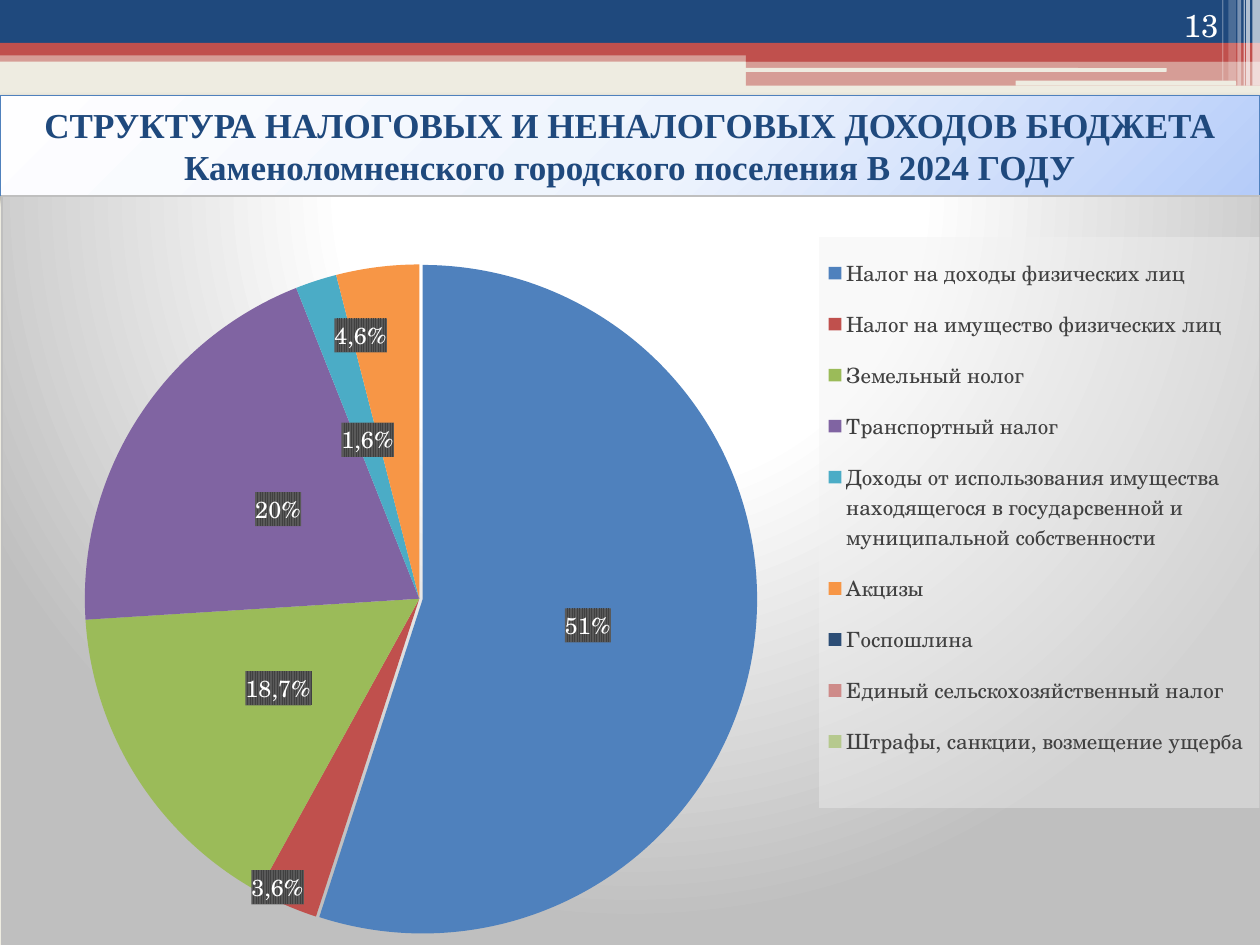
from pptx import Presentation, util as u
from pptx.chart.data import CategoryChartData
from pptx.dml.color import RGBColor
from pptx.enum import chart as charts, shapes, text
from pptx.oxml import parse_xml
from pptx.oxml.ns import nsdecls, qn

NAVY = RGBColor(0x1F, 0x49, 0x7D)
RED = RGBColor(0xC0, 0x50, 0x4D)
CREAM = RGBColor(0xEE, 0xEC, 0xE1)
WHITE = RGBColor(0xFF, 0xFF, 0xFF)
BLUE = RGBColor(0x4F, 0x81, 0xBD)
GREEN = RGBColor(0x9B, 0xBB, 0x59)
PURPLE = RGBColor(0x80, 0x64, 0xA2)
TEAL = RGBColor(0x4B, 0xAC, 0xC6)
ORANGE = RGBColor(0xF7, 0x96, 0x46)
DARK_BLUE = RGBColor(0x2C, 0x4D, 0x75)
GRAY = RGBColor(0x40, 0x40, 0x40)
BLACK = RGBColor(0, 0, 0)

SERIF = "TeX Gyre Schola"
RECT = shapes.MSO_SHAPE.RECTANGLE
ROUND = shapes.MSO_SHAPE.ROUNDED_RECTANGLE

BANDS = [
    (RECT, 0, 0.4, 10, 0.09, RED, 50),
    (RECT, 0, 0, 10, 0.34, NAVY, 100),
    (RECT, 0, 0.34, 10, 0.1, RED, 100),
    (RECT, 5.92, 0.39, 4.08, 0.1, RED, 100),
    (RECT, 5.92, 0.48, 4.08, 0.2, RED, 50),
    (ROUND, 5.91, 0.54, 3.35, 0.03, CREAM, 100),
    (ROUND, 8.06, 0.64, 1.75, 0.04, CREAM, 100),
]
STRIPES = [
    (9.94, 0.06, 0.68, 65), (9.89, 0.03, 0.68, 65), (9.87, 0.01, 0.68, 60),
    (9.82, 0.03, 0.68, 40), (9.75, 0.06, 0.64, 20), (9.7, 0.01, 0.64, 30),
]
INCOME = [
    ("Налог на доходы физических лиц", 55, BLUE),
    ("Налог на имущество физических лиц", 3, RED),
    ("Земельный нолог", 16, GREEN),
    ("Транспортный налог", 20, PURPLE),
    ("Доходы от использования имущества \nнаходящегося в государсвенной и \n"
     "муниципальной собственности", 2, TEAL),
    ("Акцизы", 4, ORANGE),
    ("Госпошлина", 0, DARK_BLUE),
    ("Единый сельскохозяйственный налог", 0, RED),
    ("Штрафы, санкции, возмещение ущерба \n", 0, GREEN),
]
PALE_POINTS = (7, 8)
LABELS = ["51%", "3,6%", "18,7%", "20%", "1,6%", "4,6%", "0,1%"]
LABEL_SHIFTS = {1: (-0.06, 0.18), 5: (-0.03, -0.13), 6: (0, -0.04)}


def xml(tag, body="", attrs=""):
    return parse_xml(f"<{tag} {nsdecls('a', 'c')} {attrs}>{body}</{tag}>")


def gradient(stops, left, top, right, bottom):
    gs = "".join(f'<a:gs pos="{pos * 1000}"><a:srgbClr val="{c}"/></a:gs>' for pos, c in stops)
    rect = f'l="{left}000" t="{top}000" r="{right}000" b="{bottom}000"'
    return (f'<a:gradFill {nsdecls("a")} rotWithShape="1"><a:gsLst>{gs}</a:gsLst>'
            f'<a:path path="circle"><a:fillToRect {rect}/></a:path></a:gradFill>')


def manual_layout(target="", edge=False, **values):
    body = f'<c:layoutTarget val="{target}"/>' if target else ""
    if edge:
        body += '<c:xMode val="edge"/><c:yMode val="edge"/>'
    body += "".join(f'<c:{k} val="{v}"/>' for k, v in values.items())
    return xml("c:layout", f"<c:manualLayout>{body}</c:manualLayout>")


def label_box():
    return xml("c:spPr", '<a:pattFill prst="narVert"><a:fgClr><a:srgbClr val="404040"/></a:fgClr>'
                         '<a:bgClr><a:srgbClr val="595959"/></a:bgClr></a:pattFill>')


def drop_layout(parent):
    for layout in parent.findall(qn("c:layout")):
        parent.remove(layout)


def set_font(font, size, color, bold=False, name=SERIF):
    font.name, font.size, font.bold = name, u.Pt(size), bold
    font.color.rgb = color


def set_fill(fill, color, alpha=100):
    fill.solid()
    fill.fore_color.rgb = color
    if alpha < 100:
        clr = fill._xPr.find(qn("a:solidFill"))[0]
        clr.append(xml("a:alpha", attrs=f'val="{alpha * 1000}"'))


class Deck:
    def __init__(self):
        self.prs = Presentation()
        self.prs.slide_width, self.prs.slide_height = u.Inches(10), u.Inches(7.5)
        self.s = self.prs.slides.add_slide(self.prs.slide_layouts[6])
        set_fill(self.s.background.fill, CREAM)

    def bar(self, kind, x, y, w, h, color, alpha=100):
        sp = self.s.shapes.add_shape(kind, *map(u.Inches, (x, y, w, h)))
        sp.shadow.inherit = False
        sp.line.fill.background()
        set_fill(sp.fill, color, alpha)
        return sp

    def title(self, x, y, w, h, words):
        sp = self.bar(RECT, x, y, w, h, WHITE)
        sp.line.color.rgb, sp.line.width = BLUE, u.Pt(0.75)
        pr = sp._element.spPr
        stops = [(0, "FEFEFF"), (55, "EDF3FD"), (100, "B5CCF9")]
        pr.replace(pr.find(qn("a:solidFill")), parse_xml(gradient(stops, -40, -90, 140, 190)))
        pr.find(qn("a:effectLst")).append(xml(
            "a:outerShdw", '<a:srgbClr val="000000"><a:alpha val="40000"/></a:srgbClr>',
            f'blurRad="{u.Pt(4.1)}" dist="{u.Pt(2)}" dir="5400000" rotWithShape="0"'))
        tf = sp.text_frame
        tf.word_wrap, tf.vertical_anchor = True, text.MSO_ANCHOR.MIDDLE
        p = tf.paragraphs[0]
        p.text, p.alignment = words, text.PP_ALIGN.CENTER
        set_font(p.font, 20, NAVY, True, "Times New Roman")

    def number(self, x, y, w, h, words):
        tf = self.s.shapes.add_textbox(*map(u.Inches, (x, y, w, h))).text_frame
        tf.word_wrap, tf.vertical_anchor = True, text.MSO_ANCHOR.BOTTOM
        p = tf.paragraphs[0]
        p.text, p.alignment = words, text.PP_ALIGN.RIGHT
        set_font(p.font, 18, WHITE)

    def pie(self, x, y, w, h):
        data = CategoryChartData()
        data.categories = [name for name, _, _ in INCOME]
        data.add_series("Series 1", [value for _, value, _ in INCOME])
        chart = self.s.shapes.add_chart(
            charts.XL_CHART_TYPE.PIE, *map(u.Inches, (x, y, w, h)), data).chart
        chart.has_title = False
        set_font(chart.font, 10, BLACK)
        root = chart._chartSpace.find(qn("c:chart"))
        stops = [(0, "FFFFFF"), (39, "FFFFFF"), (100, "BFBFBF")]
        root.addnext(xml("c:spPr", gradient(stops, 50, -80, 50, 180) +
                         f'<a:ln w="{u.Pt(0.75)}"><a:solidFill><a:srgbClr val="BFBFBF"/>'
                         '</a:solidFill></a:ln>'))
        area = root.find(qn("c:plotArea"))
        drop_layout(area)
        area.insert(0, manual_layout("inner", True, x=0.066, y=0.091, w=0.532, h=0.891))
        self.legend(chart)
        self.slices(chart.plots[0].series[0])

    def legend(self, chart):
        chart.has_legend = True
        legend = chart.legend
        legend.position = charts.XL_LEGEND_POSITION.RIGHT
        legend.include_in_layout = False
        set_font(legend.font, 12, GRAY)
        el = legend._element
        drop_layout(el)
        el.find(qn("c:legendPos")).addnext(
            manual_layout(edge=True, x=0.65, y=0.055, w=0.35, h=0.76))
        el.find(qn("c:txPr")).addprevious(xml(
            "c:spPr", '<a:solidFill><a:srgbClr val="F2F2F2"><a:alpha val="39000"/>'
                      '</a:srgbClr></a:solidFill>'))

    def slices(self, series):
        for i, (_, _, color) in enumerate(INCOME):
            set_fill(series.points[i].format.fill, color, 60 if i in PALE_POINTS else 100)
        first = series._element.find(qn("c:dPt"))
        first.find(qn("c:spPr")).addprevious(xml("c:explosion", attrs='val="1"'))
        labels = series.data_labels
        labels.show_percentage, labels.show_value = True, False
        labels.number_format, labels.number_format_is_linked = "0%", False
        labels.position = charts.XL_LABEL_POSITION.CENTER
        set_font(labels.font, 13.3, WHITE, True)
        el = labels._element
        el.find(qn("c:txPr")).addprevious(label_box())
        for i, words in enumerate(LABELS):
            label = series.points[i].data_label
            p = label.text_frame.paragraphs[0]
            p.text = words
            set_font(p.font, 13.3, WHITE)
            label.position = charts.XL_LABEL_POSITION.CENTER
            d = el.findall(qn("c:dLbl"))[i]
            d.find(qn("c:tx")).addnext(label_box())
            if i in LABEL_SHIFTS:
                dx, dy = LABEL_SHIFTS[i]
                d.find(qn("c:idx")).addnext(manual_layout(x=dx, y=dy))
        el.findall(qn("c:dLbl"))[-1].addnext(
            xml("c:dLbl", f'<c:idx val="{len(INCOME) - 1}"/><c:delete val="1"/>'))


def main():
    deck = Deck()
    for band in BANDS:
        deck.bar(*band)
    for x, w, h, alpha in STRIPES:
        deck.bar(RECT, x, 0, w, h, WHITE, alpha)
    deck.title(0, 0.76, 10, 0.79, "СТРУКТУРА НАЛОГОВЫХ И НЕНАЛОГОВЫХ ДОХОДОВ БЮДЖЕТА "
               "Каменоломненского городского поселения В 2024 ГОДУ")
    deck.number(8.94, 0, 0.83, 0.4, "13")
    deck.pie(0.01, 1.55, 9.99, 5.97)
    deck.prs.save("out.pptx")


if __name__ == "__main__":
    main()
